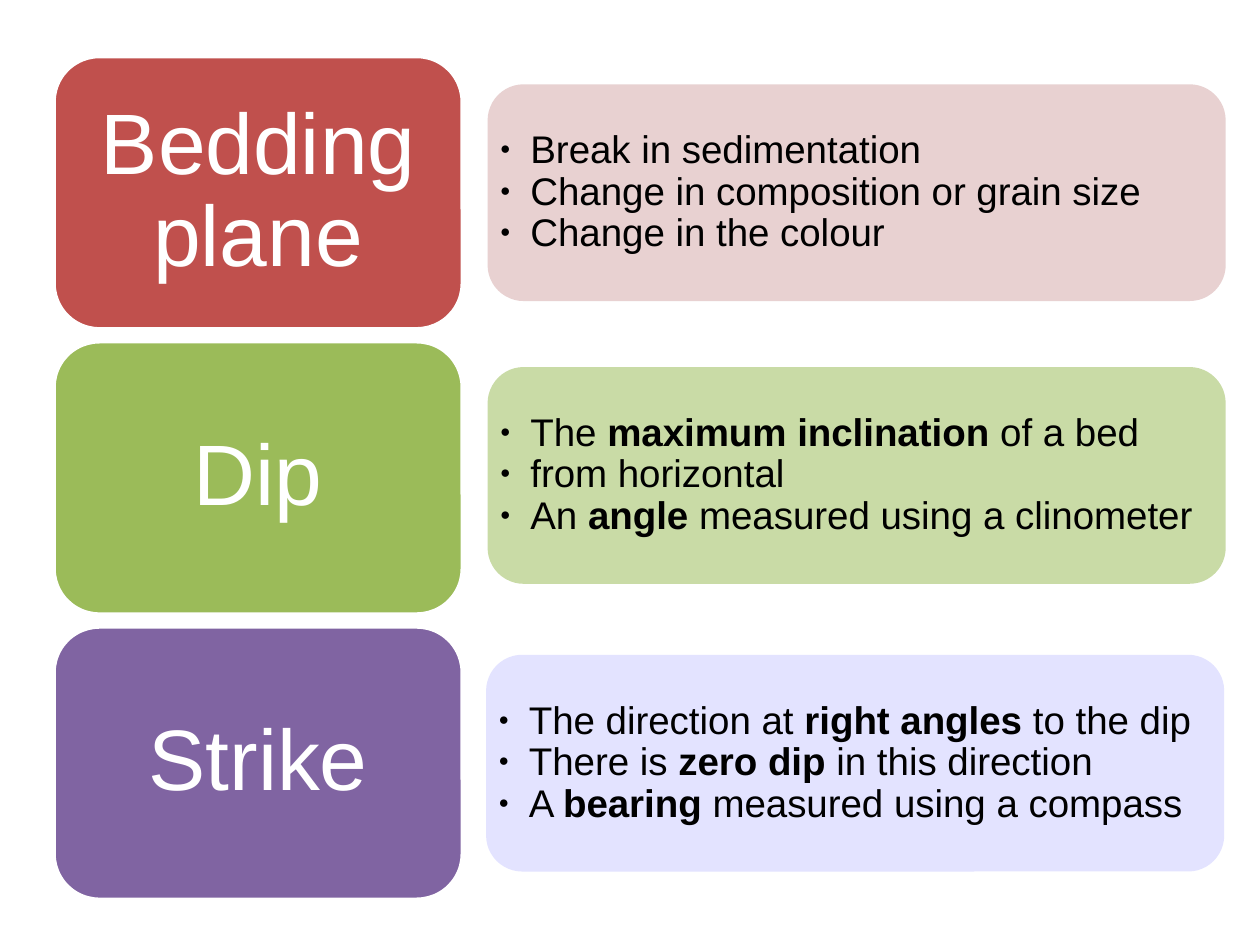
from lxml.etree import SubElement
from pptx import Presentation
from pptx.dml.color import RGBColor
from pptx.enum.shapes import MSO_SHAPE as Shape
from pptx.enum.text import MSO_ANCHOR as Anchor, PP_ALIGN as Align
from pptx.oxml.ns import qn
from pptx.util import Cm, Pt

WHITE = RGBColor(0xFF, 0xFF, 0xFF)
BLACK = RGBColor(0x00, 0x00, 0x00)
RED = RGBColor(0xC0, 0x50, 0x4D)
GREEN = RGBColor(0x9B, 0xBB, 0x59)
PURPLE = RGBColor(0x80, 0x64, 0xA2)
ROSE = RGBColor(0xCC, 0x99, 0x99)
LEAF = RGBColor(0x66, 0x99, 0x00)
LAVENDER = RGBColor(0xCC, 0xCC, 0xFF)

CARD_LEFT, CARD_TOP, CARD_W, CARD_H = 1.09, 1.14, 8.23, 5.49
CARD_PITCH = 5.75
PANEL_W, PANEL_H = 14.88, 4.37

TERMS = [
    ("Bedding plane", RED, ROSE, 45, 9.83, 1.7,
     ["Break in sedimentation",
      "Change in composition or grain size",
      "Change in the colour"]),
    ("Dip", GREEN, LEAF, 35, 9.83, 7.4,
     ["The **maximum inclination **of a bed",
      "from horizontal",
      "An **angle** measured using a clinometer"]),
    ("Strike", PURPLE, LAVENDER, 55, 9.8, 13.2,
     ["The direction at **right angles **to the dip",
      "There is **zero dip** in this direction",
      "A **bearing** measured using a compass"]),
]


def add_bullet(p):
    pPr = p._p.get_or_add_pPr()
    pPr.set("marL", str(Cm(0.61)))
    pPr.set("indent", str(-Cm(0.61)))
    color = SubElement(pPr, qn("a:buClr"))
    SubElement(color, qn("a:srgbClr"), val=str(BLACK))
    SubElement(pPr, qn("a:buSzPct"), val="45000")
    SubElement(pPr, qn("a:buFont"), typeface="Arial")
    SubElement(pPr, qn("a:buChar"), char="●")


def add_text(p, text, size, color, align=Align.LEFT, bullet=False):
    p.alignment = align
    p.line_spacing = 0.9
    if bullet:
        add_bullet(p)
    for i, part in enumerate(text.split("**")):
        r = p.add_run()
        r.text = part
        r.font.name = "Arial"
        r.font.size = Pt(size)
        r.font.bold = i % 2 == 1
        r.font.color.rgb = color


def add_box(s, left, top, width, height, fill, inset_x, inset_y):
    sp = s.shapes.add_shape(Shape.ROUNDED_RECTANGLE,
                            Cm(left), Cm(top), Cm(width), Cm(height))
    sp.shadow.inherit = False
    sp.fill.solid()
    sp.fill.fore_color.rgb = fill
    tf = sp.text_frame
    tf.word_wrap = True
    tf.vertical_anchor = Anchor.MIDDLE
    tf.margin_left = tf.margin_right = Cm(inset_x)
    tf.margin_top = tf.margin_bottom = Cm(inset_y)
    return sp


def add_card(s, top, term, fill):
    sp = add_box(s, CARD_LEFT, top, CARD_W, CARD_H, fill, 0.51, 0.25)
    sp.line.color.rgb = WHITE
    sp.line.width = Pt(2)
    add_text(sp.text_frame.paragraphs[0], term, size=49, color=WHITE,
             align=Align.CENTER)


def add_panel(s, left, top, points, fill, opacity):
    sp = add_box(s, left, top, PANEL_W, PANEL_H, fill, 0.04, 0.13)
    sp.line.fill.background()
    srgb = sp.fill._xPr.find(".//" + qn("a:srgbClr"))
    SubElement(srgb, qn("a:alpha"), val=str(opacity * 1000))
    tf = sp.text_frame
    for i, point in enumerate(points):
        p = tf.add_paragraph() if i else tf.paragraphs[0]
        add_text(p, point, size=22, color=BLACK, bullet=True)


def main():
    prs = Presentation()
    prs.slide_width, prs.slide_height = Cm(25.4), Cm(19.05)
    s = prs.slides.add_slide(prs.slide_layouts[6])
    for i, (term, fill, tint, opacity, left, top, points) in enumerate(TERMS):
        add_card(s, CARD_TOP + i * CARD_PITCH, term, fill)
        add_panel(s, left, top, points, tint, opacity)
    prs.save("out.pptx")


if __name__ == "__main__":
    main()
